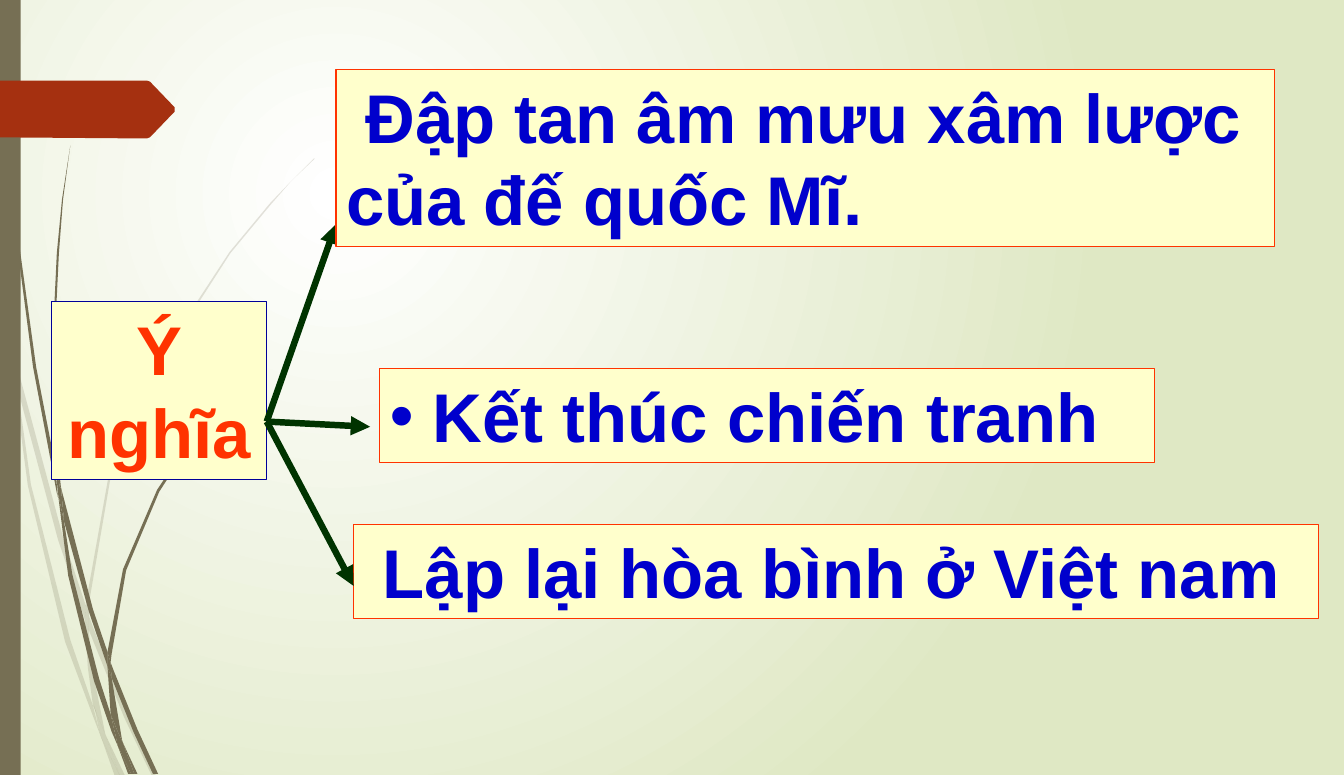
from lxml.etree import SubElement
from pptx import Presentation
from pptx.dml.color import RGBColor
from pptx.enum.shapes import MSO_CONNECTOR, MSO_SHAPE
from pptx.enum.text import MSO_ANCHOR, MSO_AUTO_SIZE, PP_ALIGN
from pptx.oxml.ns import qn
from pptx.util import Pt

PX = 9144  # EMU in one px: 100 px to the inch
WIDTH, HEIGHT = 1300, 750
COLORS = {
    "white": "FFFFFF", "pale": "DFE8C4", "grass": "766F54", "flag": "A53010",
    "cream": "FFFFCC", "red": "FF3300", "navy": "000099", "blue": "0000CC",
    "green": "003300", "black": "000000",
}

# Outlines of the grass, one piece a list of corners
LIGHT_GRASS = [
    [(11, 350), (8, 322), (0, 282), (0, 299), (10, 344)],
    [(56, 522), (82, 599), (83, 586), (61, 520), (14, 345), (17, 376)],
    [(90, 607), (86, 596), (86, 610), (120, 694), (147, 751), (151, 751),
     (124, 692)],
    [(116, 751), (121, 751), (102, 711)],
    [(90, 683), (68, 619), (30, 469), (17, 376), (11, 350), (27, 470),
     (63, 621), (90, 693), (98, 714), (96, 707)],
    [(82, 599), (85, 646), (90, 683), (94, 692), (102, 711), (101, 706),
     (89, 646), (86, 610), (86, 608)],
    [(86, 584), (107, 462), (156, 349), (223, 245), (262, 198), (282, 175),
     (304, 154), (304, 153), (282, 175), (261, 197), (222, 244), (154, 348),
     (105, 461), (83, 584), (83, 586), (86, 596)],
    [(98, 714), (111, 751), (116, 751)],
    [(86, 608), (86, 610), (86, 596), (83, 586), (82, 599)],
    [(94, 692), (91, 683), (96, 707), (98, 714), (116, 751), (102, 711)],
]
DARK_GRASS = [
    [(6, 110), (16, 233), (32, 355), (55, 477), (56, 481), (54, 457),
     (54, 453), (35, 355), (18, 232), (8, 109), (4, 48), (3, 0), (3, 48)],
    [(86, 592), (104, 645), (104, 633), (104, 631), (90, 590), (59, 472),
     (62, 505)],
    [(110, 649), (107, 641), (108, 656), (129, 708), (148, 749), (153, 749),
     (133, 706)],
    [(107, 691), (96, 657), (70, 556), (62, 505), (56, 477), (66, 557),
     (91, 659), (108, 708), (114, 722), (113, 717)],
    [(59, 472), (57, 453), (52, 349), (57, 245), (61, 193), (68, 141),
     (60, 193), (55, 245), (50, 349), (54, 449), (58, 472)],
    [(130, 749), (133, 749), (119, 719)],
    [(56, 477), (62, 505), (59, 472), (58, 472), (54, 449), (54, 453)],
    [(108, 633), (122, 552), (154, 476), (199, 406), (226, 374), (239, 359),
     (254, 344), (239, 358), (225, 373), (198, 405), (152, 474), (119, 551),
     (104, 631), (107, 641)],
    [(114, 722), (124, 749), (127, 749)],
    [(104, 645), (107, 691), (113, 706), (119, 719), (118, 716), (108, 656),
     (106, 651)],
    [(104, 645), (106, 651), (108, 656), (107, 641), (104, 631), (104, 633)],
    [(113, 706), (107, 691), (113, 717), (114, 722), (127, 749), (130, 749),
     (119, 719)],
]
FLAG = [(169, 108), (145, 133), (142, 134), (133, 134), (0, 133), (0, 78),
        (133, 78), (142, 78), (145, 79), (169, 104)]


def emu(*lengths):
    return [v * PX for v in lengths]


def rgb(name):
    return RGBColor.from_string(COLORS[name])


class Deck:
    font, size, border, arrow_width = "Arial", Pt(48), Pt(0.75), Pt(4.5)

    def __init__(self, slide):
        self.slide = slide

    def background(self, inner, outer):
        fill = self.slide.background.fill
        fill.gradient()
        for stop, color, position in zip(fill.gradient_stops, (inner, outer), (0, 1)):
            stop.color.rgb = rgb(color)
            stop.position = position
        grad = self.slide.background._cSld.find(".//" + qn("a:gradFill"))
        grad.remove(grad.find(qn("a:lin")))
        radial = SubElement(grad, qn("a:path"), {"path": "circle"})
        SubElement(radial, qn("a:fillToRect"),
                   {"l": "50000", "t": "50000", "r": "100000", "b": "100000"})

    def paint(self, s, fill, line=None):
        s.shadow.inherit = False
        s.fill.solid()
        s.fill.fore_color.rgb = rgb(fill)
        if line:
            s.line.color.rgb = rgb(line)
            s.line.width = self.border
        else:
            s.line.fill.background()
        return s

    def rectangle(self, box, fill, line=None):
        s = self.slide.shapes.add_shape(MSO_SHAPE.RECTANGLE, *emu(*box))
        return self.paint(s, fill, line)

    def outline(self, corners, color, alpha=None):
        builder = self.slide.shapes.build_freeform(*corners[0], scale=PX)
        builder.add_line_segments(corners[1:], close=True)
        s = self.paint(builder.convert_to_shape(), color)
        if alpha:
            clr = s._element.spPr.find(qn("a:solidFill"))[0]
            SubElement(clr, qn("a:alpha"), {"val": str(alpha * 1000)})

    def text_box(self, box, runs, line, align=None, bullet=None):
        s = self.rectangle(box, "cream", line)
        tf = s.text_frame
        tf.word_wrap = True
        tf.auto_size = MSO_AUTO_SIZE.SHAPE_TO_FIT_TEXT
        tf.vertical_anchor = MSO_ANCHOR.TOP
        p = tf.paragraphs[0]
        p.alignment = align or PP_ALIGN.LEFT
        if bullet:
            pPr = p._p.get_or_add_pPr()
            SubElement(pPr, qn("a:buFont"), {"typeface": self.font})
            SubElement(pPr, qn("a:buChar"), {"char": bullet})
        for text, color, bold in runs:
            r = p.add_run()
            r.text = text
            r.font.name, r.font.size, r.font.bold = self.font, self.size, bold
            r.font.color.rgb = rgb(color)

    def arrow(self, start, end, color):
        c = self.slide.shapes.add_connector(
            MSO_CONNECTOR.STRAIGHT, *emu(*start, *end))
        c.line.color.rgb = rgb(color)
        c.line.width = self.arrow_width
        SubElement(c.line._get_or_add_ln(), qn("a:tailEnd"), {"type": "triangle"})
        SubElement(c._element.spPr, qn("a:effectLst"))


def main():
    prs = Presentation()
    prs.slide_width, prs.slide_height = emu(WIDTH, HEIGHT)
    deck = Deck(prs.slides.add_slide(prs.slide_layouts[6]))

    # Backdrop: gradient, grass, side strip and flag
    deck.background("white", "pale")
    for piece in LIGHT_GRASS:
        deck.outline(piece, "grass", alpha=20)
    for piece in DARK_GRASS:
        deck.outline(piece, "grass")
    deck.rectangle((0, 0, 20, HEIGHT), "grass")
    deck.outline(FLAG, "flag")

    # Topic and its lower two points
    deck.text_box((50, 292, 208, 172), [("Ý nghĩa", "red", True)], "navy",
                  align=PP_ALIGN.CENTER)
    deck.text_box((367, 357, 750, 91), [(" Kết thúc chiến tranh", "blue", True)],
                  "red", bullet="•")
    deck.text_box((342, 508, 933, 91),
                  [(" ", "black", False),
                   ("Lập lại hòa bình ở Việt nam", "blue", True)], "red")

    # Arrows from the topic, then the top point above them
    for end in [(358, 413), (325, 217), (342, 567)]:
        deck.arrow((258, 408), end, "green")
    deck.text_box((325, 67, 908, 172),
                  [(" Đập tan âm mưu xâm lược của đế quốc Mĩ.", "blue", True)], "red")

    prs.save("out.pptx")


if __name__ == "__main__":
    main()
